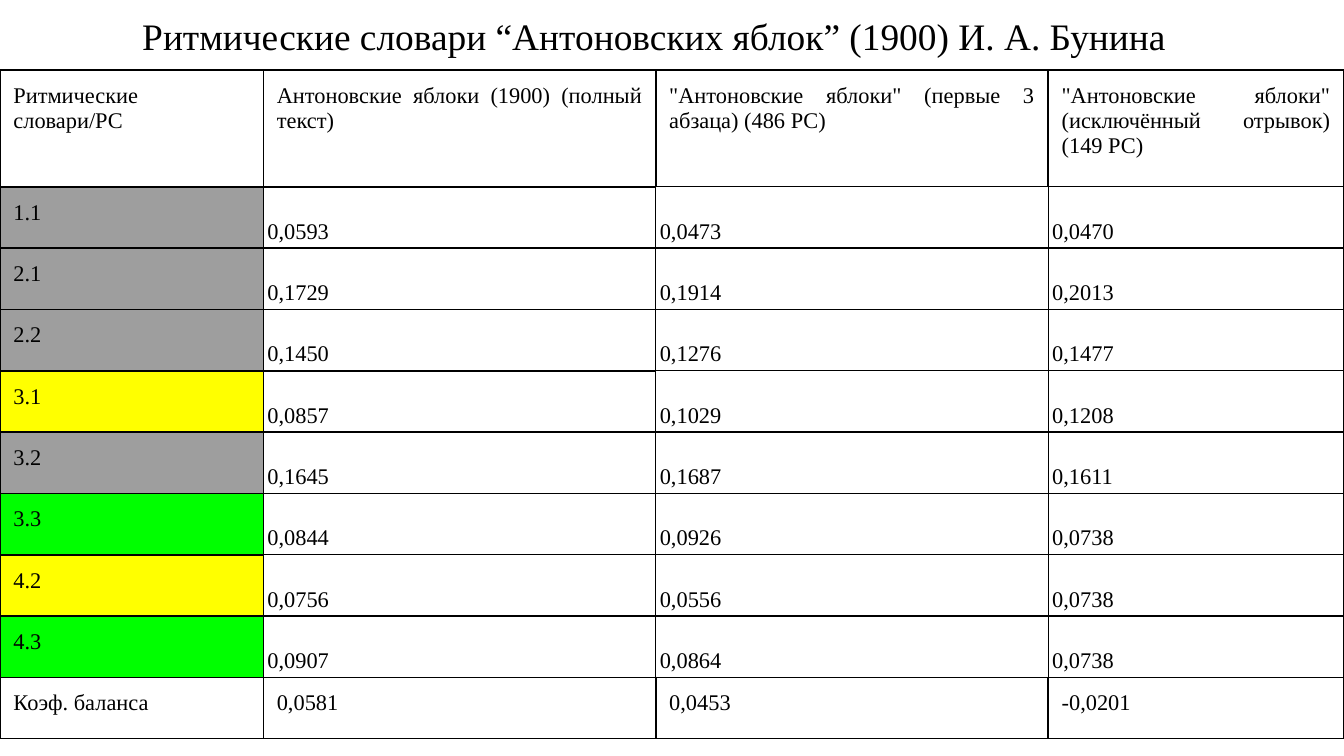
from dataclasses import dataclass

from lxml import etree
from pptx import Presentation
from pptx.dml.color import RGBColor
from pptx.enum.text import MSO_ANCHOR, PP_ALIGN
from pptx.oxml.ns import qn
from pptx.util import Inches, Pt

TOP, BOTTOM = MSO_ANCHOR.TOP, MSO_ANCHOR.BOTTOM
LEFT, JUSTIFY = PP_ALIGN.LEFT, PP_ALIGN.JUSTIFY


@dataclass(frozen=True)
class Theme:
    font: str = "Times New Roman"
    title_size: int = 20
    table_size: int = 12
    ink: str = "000000"
    white: str = "FFFFFF"
    gray: str = "9E9E9E"
    yellow: str = "FFFF00"
    green: str = "00FF00"
    thick: float = 1
    thin: float = 0.75
    wide_inset: float = 0.1
    narrow_inset: float = 0.03


THEME = Theme()
PAGE_WIDTH = 10
PAGE_HEIGHT = PAGE_WIDTH * 9 / 16
COLUMN_WIDTHS = [1.96, 2.92, 2.92, 2.2]
HEADER_HEIGHT = 0.87
HEADER = [
    "Ритмические словари/РС",
    "Антоновские яблоки (1900) (полный текст)",
    '"Антоновские яблоки" (первые 3 абзаца) (486 РС)',
    '"Антоновские яблоки" (исключённый отрывок) (149 РС)',
]
BODY = [
    ["1.1", "0,0593", "0,0473", "0,0470"],
    ["2.1", "0,1729", "0,1914", "0,2013"],
    ["2.2", "0,1450", "0,1276", "0,1477"],
    ["3.1", "0,0857", "0,1029", "0,1208"],
    ["3.2", "0,1645", "0,1687", "0,1611"],
    ["3.3", "0,0844", "0,0926", "0,0738"],
    ["4.2", "0,0756", "0,0556", "0,0738"],
    ["4.3", "0,0907", "0,0864", "0,0738"],
]
FOOTER = ["Коэф. баланса", "0,0581", "0,0453", "-0,0201"]
ROWS = [HEADER, *BODY, FOOTER]
LAST_ROW = len(ROWS) - 1
LABEL_FILLS = {
    "1.1": THEME.gray, "2.1": THEME.gray, "2.2": THEME.gray, "3.2": THEME.gray,
    "3.1": THEME.yellow, "4.2": THEME.yellow,
    "3.3": THEME.green, "4.3": THEME.green,
}


def write_text(frame, text, *, size, align=LEFT, spacing=None):
    para = frame.paragraphs[0]
    para.alignment = align
    if spacing:
        para.line_spacing = spacing
    span = para.add_run()
    span.text = text
    span.font.name = THEME.font
    span.font.size = Pt(size)
    span.font.color.rgb = RGBColor.from_string(THEME.ink)


def set_insets(holder, inset):
    holder.margin_left = holder.margin_right = Inches(inset)
    holder.margin_top = holder.margin_bottom = Inches(inset)


def horizontal_weight(edge, column):
    """Weight of the rule above row number `edge`."""
    outer = edge == 0 or edge >= LAST_ROW
    return THEME.thick if outer or column == 0 or (column == 1 and edge <= 6) else THEME.thin


def vertical_weight(edge, row):
    """Weight of the rule to the left of column number `edge`."""
    return THEME.thick if row in (0, LAST_ROW) or edge <= 1 else THEME.thin


def set_borders(cell, row, column):
    weights = {
        "a:lnL": vertical_weight(column, row),
        "a:lnR": vertical_weight(column + 1, row),
        "a:lnT": horizontal_weight(row, column),
        "a:lnB": horizontal_weight(row + 1, column),
    }
    properties = cell._tc.get_or_add_tcPr()
    for position, (tag, weight) in enumerate(weights.items()):
        line = etree.Element(qn(tag), w=str(Pt(weight)))
        fill = etree.SubElement(line, qn("a:solidFill"))
        etree.SubElement(fill, qn("a:srgbClr"), val=THEME.ink)
        properties.insert(position, line)


def fill_cell(cell, text, row, column):
    is_value = column > 0 and 0 < row < LAST_ROW
    cell.vertical_anchor = BOTTOM if is_value else TOP
    set_insets(cell, THEME.narrow_inset if is_value else THEME.wide_inset)
    cell.fill.solid()
    cell.fill.fore_color.rgb = RGBColor.from_string(LABEL_FILLS.get(text, THEME.white))
    set_borders(cell, row, column)
    write_text(cell.text_frame, text, size=THEME.table_size, align=JUSTIFY,
               spacing=1.15 if is_value else None)


def add_title(page, left, top, width, height):
    box = page.shapes.add_textbox(Inches(left), Inches(top), Inches(width), Inches(height))
    frame = box.text_frame
    frame.word_wrap = True
    set_insets(frame, THEME.wide_inset)
    write_text(frame, "Ритмические словари “Антоновских яблок” (1900) И. А. Бунина",
               size=THEME.title_size)


def add_rhythm_table(page, left, top, width, height):
    table = page.shapes.add_table(len(ROWS), len(HEADER), Inches(left), Inches(top),
                                  Inches(width), Inches(height)).table
    table.first_row = table.horz_banding = False
    for column, share in zip(table.columns, COLUMN_WIDTHS):
        column.width = Inches(width * share / sum(COLUMN_WIDTHS))
    row_height = (height - HEADER_HEIGHT) / LAST_ROW
    for row, texts in enumerate(ROWS):
        table.rows[row].height = Inches(row_height if row else HEADER_HEIGHT)
        for column, text in enumerate(texts):
            fill_cell(table.cell(row, column), text, row, column)


def main():
    deck = Presentation()
    deck.slide_width, deck.slide_height = Inches(PAGE_WIDTH), Inches(PAGE_HEIGHT)
    page = deck.slides.add_slide(deck.slide_layouts[6])
    add_rhythm_table(page, 0, 0.52, PAGE_WIDTH, 4.98)
    add_title(page, 0.96, 0, 8.08, 0.54)
    deck.save("out.pptx")


if __name__ == "__main__":
    main()
